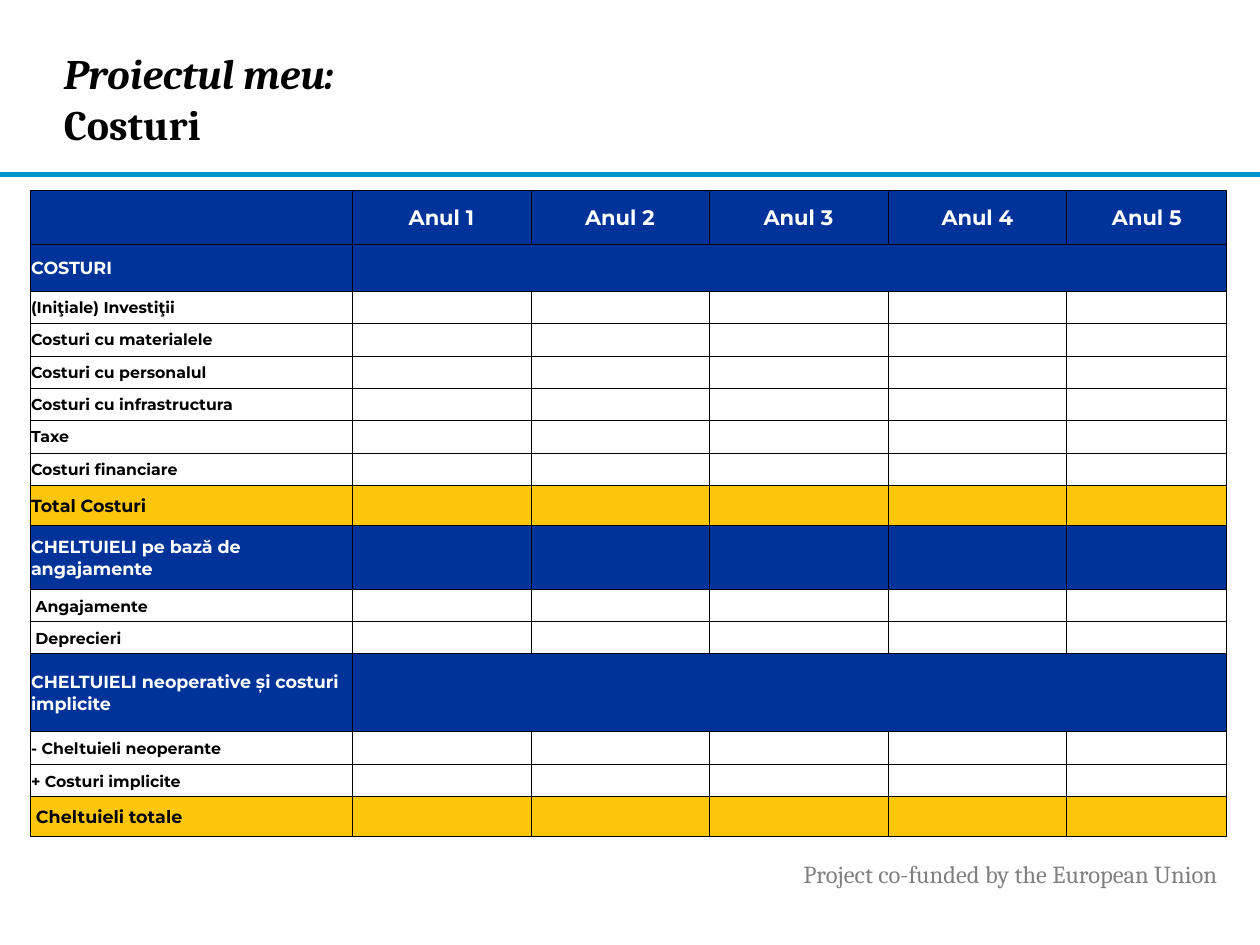
from lxml import etree
from pptx import Presentation
from pptx.dml.color import RGBColor
from pptx.enum.shapes import MSO_SHAPE
from pptx.enum.text import MSO_ANCHOR, MSO_AUTO_SIZE, PP_ALIGN
from pptx.oxml.ns import qn
from pptx.util import Pt

PX = 914400 // 126
RECTANGLE = MSO_SHAPE.RECTANGLE
MIDDLE = MSO_ANCHOR.MIDDLE
LEFT, CENTER = PP_ALIGN.LEFT, PP_ALIGN.CENTER
NO_AUTOFIT = MSO_AUTO_SIZE.NONE

BLACK = RGBColor(0x00, 0x00, 0x00)
WHITE = RGBColor(0xFF, 0xFF, 0xFF)
GRAY = RGBColor(0x80, 0x80, 0x80)
BLUE = RGBColor(0x00, 0x33, 0x99)
YELLOW = RGBColor(0xFD, 0xC6, 0x08)
TEAL = RGBColor(0x0C, 0x94, 0xB7)
SKY = RGBColor(0x00, 0x96, 0xD3)

SERIF, SANS = "Cambria", "Montserrat"
TITLE_ONLY = 5

COLUMN_WIDTHS = [322, 179, 178, 179, 179, 160]
YEARS = [f"Anul {n}" for n in range(1, 6)]

# Row kind: fill, text colour, text size
STYLES = {
    "section": (BLUE, WHITE, 10),
    "item": (None, BLACK, 9),
    "total": (YELLOW, BLACK, 10),
}
# Label, kind, height, whether the year cells are merged
ROWS = [
    ("COSTURI", "section", 47, True),
    ("(Iniţiale) Investiţii", "item", 32, False),
    ("Costuri cu materialele", "item", 33, False),
    ("Costuri cu personalul", "item", 32, False),
    ("Costuri cu infrastructura", "item", 32, False),
    ("Taxe", "item", 33, False),
    ("Costuri financiare", "item", 32, False),
    ("Total Costuri", "total", 41, False),
    ("CHELTUIELI pe bază de angajamente", "section", 64, False),
    (" Angajamente", "item", 32, False),
    (" Deprecieri", "item", 32, False),
    ("CHELTUIELI neoperative și costuri implicite", "section", 78, True),
    ("- Cheltuieli neoperante", "item", 33, False),
    ("+ Costuri implicite", "item", 32, False),
    (" Cheltuieli totale", "total", 40, False),
]


def px(*values):
    return [v * PX for v in values]


def add_text(p, text, font=SANS, size=9, color=BLACK, bold=False, italic=False,
             align=LEFT):
    p.alignment = align
    r = p.add_run()
    r.text = text
    r.font.name = font
    r.font.size = Pt(size)
    r.font.color.rgb = color
    r.font.bold = bold
    r.font.italic = italic


def add_title(slide):
    title = slide.shapes.title
    title.left, title.top, title.width, title.height = px(64, 23, 916, 150)
    tf = title.text_frame
    tf.auto_size = NO_AUTOFIT
    tf.word_wrap = True
    tf.vertical_anchor = MIDDLE
    tf.margin_left = tf.margin_right = tf.margin_top = tf.margin_bottom = 0
    p = tf.paragraphs[0]
    add_text(p, "Proiectul meu:", font=SERIF, size=24, bold=True, italic=True)
    p.add_line_break()
    add_text(p, "Costuri", font=SERIF, size=24, bold=True)


def add_rule(slide):
    sp = slide.shapes.add_shape(RECTANGLE, *px(0, 173, 1260, 3))
    sp.shadow.inherit = False
    sp.fill.solid()
    sp.fill.fore_color.rgb = TEAL
    sp.line.color.rgb = SKY
    sp.line.width = Pt(1)


def add_footer(slide):
    box = slide.shapes.add_textbox(*px(791, 853, 461, 43))
    tf = box.text_frame
    tf.word_wrap = True
    add_text(tf.paragraphs[0], "Project co-funded by the European Union",
             font=SERIF, size=14, color=GRAY)


def set_borders(cell):
    """Draw a thin black line on all four sides, ahead of the cell's fill."""
    tc_pr = cell._tc.get_or_add_tcPr()
    for i, side in enumerate(("lnL", "lnR", "lnT", "lnB")):
        ln = etree.Element(qn(f"a:{side}"), w=str(Pt(0.5)))
        fill = etree.SubElement(ln, qn("a:solidFill"))
        etree.SubElement(fill, qn("a:srgbClr"), val=str(BLACK))
        tc_pr.insert(i, ln)


def format_cell(cell, text, fill, **text_format):
    cell.vertical_anchor = MIDDLE
    cell.margin_left = cell.margin_right = cell.margin_top = PX
    cell.margin_bottom = 0
    if fill is None:
        cell.fill.background()
    else:
        cell.fill.solid()
        cell.fill.fore_color.rgb = fill
    set_borders(cell)
    p = cell.text_frame.paragraphs[0]
    if text:
        add_text(p, text, bold=True, **text_format)
    else:
        # Keeps an empty cell from stretching its row
        etree.SubElement(p._p, qn("a:endParaRPr"), sz="900")


def add_cost_table(slide):
    heights = [54] + [height for _, _, height, _ in ROWS]
    frame = slide.shapes.add_table(
        len(heights), len(COLUMN_WIDTHS),
        *px(30, 190, sum(COLUMN_WIDTHS), sum(heights)))
    table = frame.table
    table.horz_banding = False
    for column, width in zip(table.columns, COLUMN_WIDTHS):
        column.width = width * PX
    for row, height in zip(table.rows, heights):
        row.height = height * PX

    for c, text in enumerate([""] + YEARS):
        format_cell(table.cell(0, c), text, BLUE, size=12, color=WHITE,
                    align=CENTER)
    for r, (label, kind, _, merged) in enumerate(ROWS, start=1):
        fill, color, size = STYLES[kind]
        for c in range(len(COLUMN_WIDTHS)):
            format_cell(table.cell(r, c), "" if c else label, fill,
                        size=size, color=color)
        if merged:
            table.cell(r, 1).merge(table.cell(r, len(YEARS)))


def main():
    prs = Presentation()
    prs.slide_width, prs.slide_height = px(1260, 945)
    slide = prs.slides.add_slide(prs.slide_layouts[TITLE_ONLY])
    add_rule(slide)
    add_footer(slide)
    add_title(slide)
    add_cost_table(slide)
    prs.save("out.pptx")


if __name__ == "__main__":
    main()
